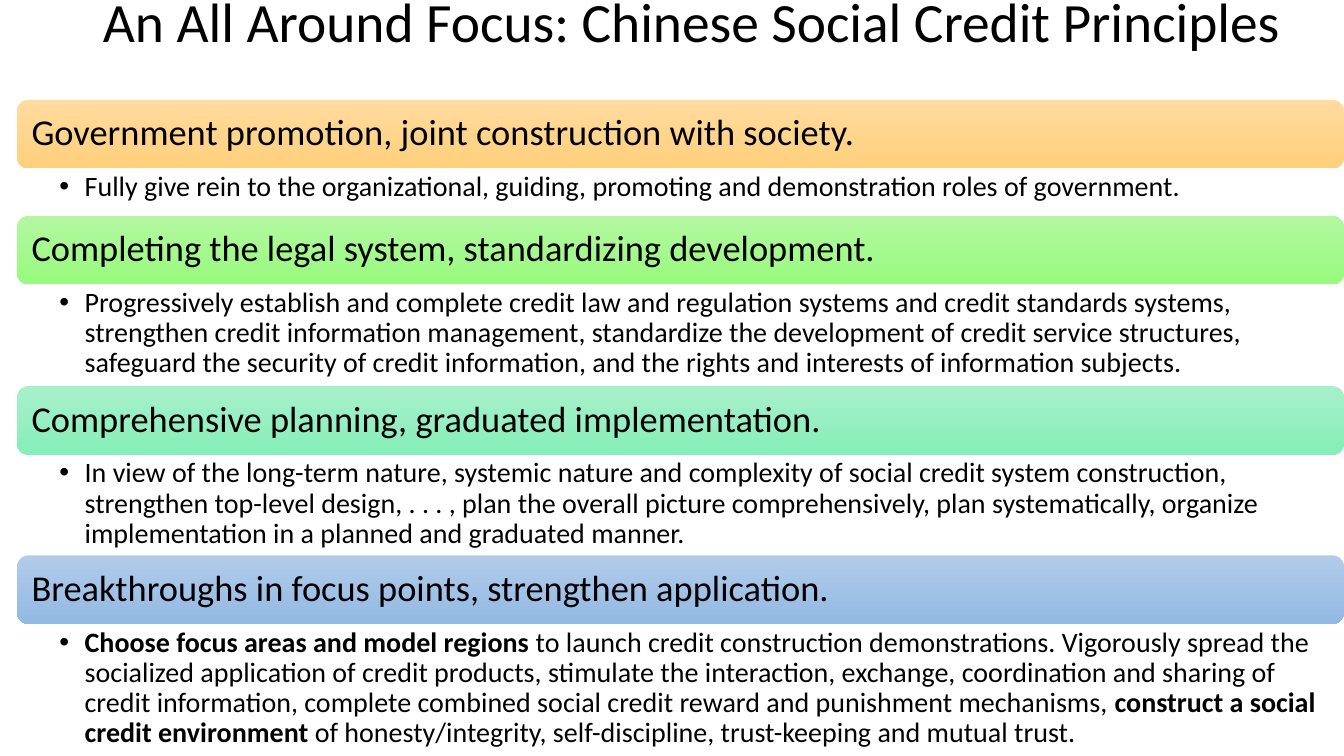
from lxml.etree import SubElement
from pptx import Presentation
from pptx.dml.color import RGBColor
from pptx.enum.shapes import MSO_SHAPE as Shape
from pptx.enum.text import MSO_ANCHOR as Anchor, MSO_AUTO_SIZE as AutoSize, PP_ALIGN as Align
from pptx.oxml.ns import qn
from pptx.util import Pt

PX = 9144  # EMU per px, 100 px to the inch
LEFT, WIDTH, BAR_HEIGHT, FIRST_TOP = 17, 1316, 68, 99

# Heading, gradient colours, height of the body, body spans as (text, bold)
PRINCIPLES = [
    ("Government promotion, joint construction with society.", ("FFDB9E", "FFD07C"), 47, [
        ("Fully give rein to the organizational, guiding, promoting and demonstration roles "
         "of government.", False)]),
    ("Completing the legal system, standardizing development.", ("B3F8A1", "98FA7E"), 101, [
        ("Progressively establish and complete credit law and regulation systems and credit "
         "standards systems, strengthen credit information management, standardize the "
         "development of credit service structures, safeguard the security of credit "
         "information, and the rights and interests of information subjects.", False)]),
    ("Comprehensive planning, graduated implementation.", ("A8F0CA", "86EEB9"), 100, [
        ("In view of the long-term nature, systemic nature and complexity of social credit "
         "system construction, strengthen top-level design, . . . , plan the overall picture "
         "comprehensively, plan systematically, organize implementation in a planned and "
         "graduated manner.", False)]),
    ("Breakthroughs in focus points, strengthen application.", ("B1CBE9", "93B9E4"), 129, [
        ("Choose focus areas and model regions ", True),
        ("to launch credit construction demonstrations. Vigorously spread the socialized "
         "application of credit products, stimulate the interaction, exchange, coordination "
         "and sharing of credit information, complete combined social credit reward and "
         "punishment mechanisms, ", False),
        ("construct a social credit environment ", True),
        ("of honesty/integrity, self-discipline, trust-keeping and mutual trust.", False)]),
]


def color(value):
    return RGBColor.from_string(value)


class PageBuilder:
    font_name = "Calibri"
    ink = "000000"

    def __init__(self, page):
        self.page = page

    def set_frame(self, frame, anchor, left, top, right, bottom):
        frame.word_wrap = True
        frame.auto_size = AutoSize.NONE
        frame.vertical_anchor = anchor
        frame.margin_left, frame.margin_top = left * PX, top * PX
        frame.margin_right, frame.margin_bottom = right * PX, bottom * PX

    def format_para(self, para, size, line_spacing=0.9):
        para.alignment = Align.LEFT
        para.line_spacing = line_spacing
        for span in para.runs:
            span.font.name = self.font_name
            span.font.size = Pt(size)
            span.font.color.rgb = color(self.ink)

    def title(self, text, left, top, width, height):
        box = self.page.shapes.title
        box.left, box.top, box.width, box.height = (n * PX for n in (left, top, width, height))
        self.set_frame(box.text_frame, Anchor.TOP, 10, 0, 10, 0)
        box.text_frame.text = text
        # Tight spacing keeps the line close to the top edge
        self.format_para(box.text_frame.paragraphs[0], 39.6, 0.8)

    def bar(self, text, top, shades):
        bar = self.page.shapes.add_shape(
            Shape.ROUNDED_RECTANGLE, LEFT * PX, top * PX, WIDTH * PX, BAR_HEIGHT * PX)
        bar.shadow.inherit = False
        bar.line.fill.background()
        bar.fill.gradient()
        bar.fill.gradient_angle = 270
        for stop, shade in zip(bar.fill.gradient_stops, shades):
            stop.color.rgb = color(shade)
        self.set_frame(bar.text_frame, Anchor.MIDDLE, 11, 11, 11, 11)
        bar.text_frame.text = text
        self.format_para(bar.text_frame.paragraphs[0], 26)

    def body(self, spans, top, height):
        box = self.page.shapes.add_textbox(LEFT * PX, top * PX, WIDTH * PX, height * PX)
        self.set_frame(box.text_frame, Anchor.TOP, 42, 4, 20, 4)
        para = box.text_frame.paragraphs[0]
        for text, bold in spans:
            span = para.add_run()
            span.text = text
            span.font.bold = bold
        self.format_para(para, 20)
        # Hanging bullet
        properties = para._p.get_or_add_pPr()
        properties.set("marL", str(25 * PX))
        properties.set("indent", str(-25 * PX))
        SubElement(properties, qn("a:buFont")).set("typeface", "Arial")
        SubElement(properties, qn("a:buChar")).set("char", "•")


def main():
    deck = Presentation()
    deck.slide_width, deck.slide_height = 1333 * PX, 750 * PX
    builder = PageBuilder(deck.slides.add_slide(deck.slide_layouts[5]))

    # Title
    builder.title("An All Around Focus: Chinese Social Credit Principles", 92, 0, 1241, 98)

    # Stacked principles: a heading bar, then its explanation
    top = FIRST_TOP
    for heading, shades, height, spans in PRINCIPLES:
        builder.bar(heading, top, shades)
        builder.body(spans, top + BAR_HEIGHT, height)
        top += BAR_HEIGHT + height

    deck.save("out.pptx")


if __name__ == "__main__":
    main()
